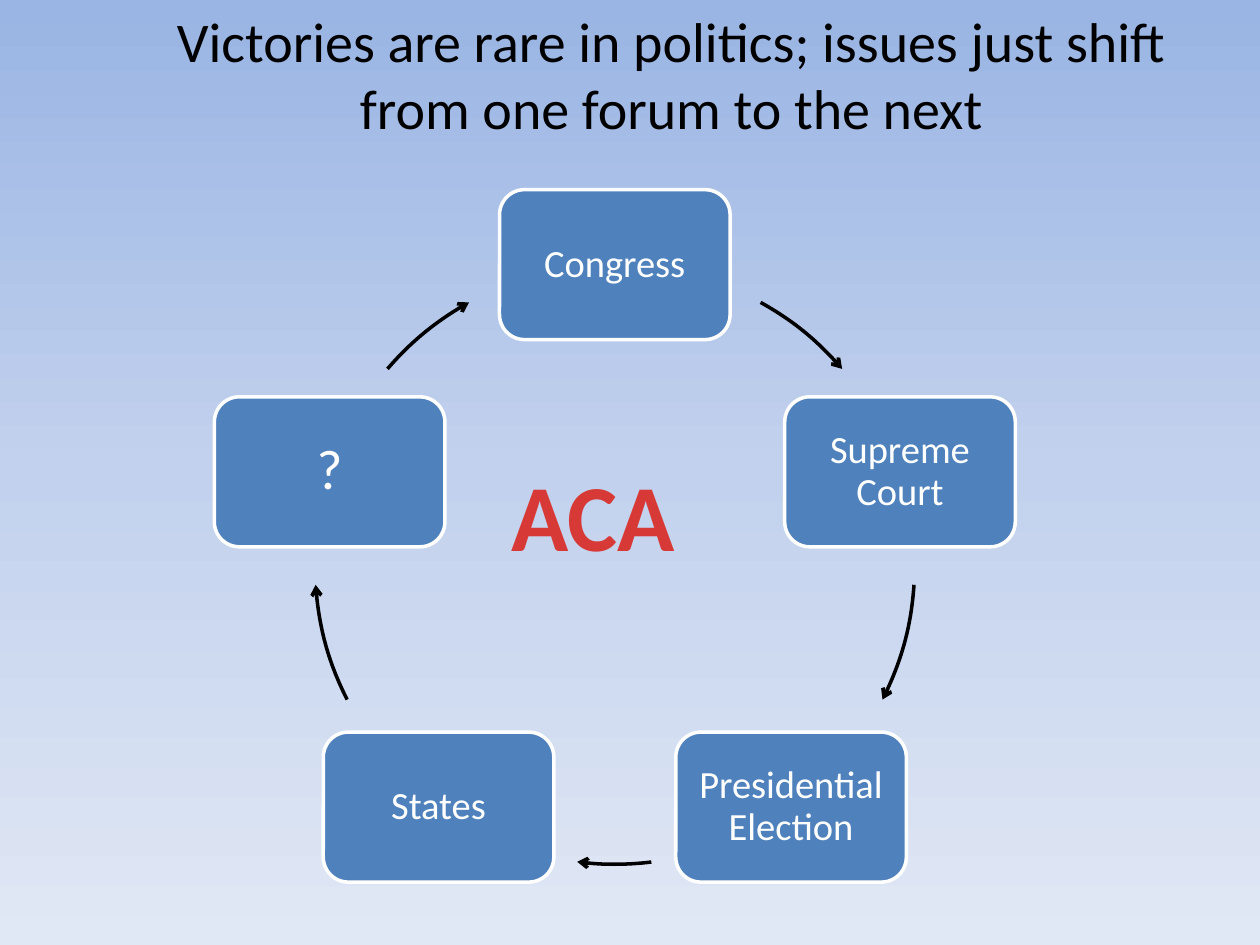
import copy
import math

from pptx import Presentation
from pptx.dml.color import RGBColor
from pptx.enum import shapes, text
from pptx.oxml import ns, xmlchemy
from pptx.util import Inches, Pt

COLORS = {
    "sky_top": "9AB5E4", "sky_middle": "C2D1ED", "sky_bottom": "E1E8F5",
    "box": "4F81BD", "white": "FFFFFF", "black": "000000", "red": "D73A36",
}
FORUMS = [("Congress", 22), ("Supreme Court", 22), ("Presidential Election", 22),
          ("States", 22), ("?", 32)]
# Start and end of each arrow in degrees, clockwise from three o'clock
ARROWS = [(299.1, 319.3), (3.9, 26.8), (83, 97.2), (153.2, 176.1), (220.7, 240.9)]
CENTER_X, CENTER_Y, RADIUS = 4.88, 4.48, 2.38
BOX_WIDTH, BOX_HEIGHT = 1.83, 1.19


def color(name):
    return RGBColor.from_string(COLORS[name])


def paint_background(page):
    fill = page.background.fill
    fill.gradient()
    fill.gradient_angle = 270
    first = next(page.element.iter(ns.qn("a:gs")))
    first.addnext(copy.deepcopy(first))
    names = ("sky_top", "sky_middle", "sky_bottom")
    for stop, name, position in zip(fill.gradient_stops, names, (0, 0.5, 1)):
        stop.color.rgb = color(name)
        stop.position = position


def write(shape, words, size, ink, bold=False, inset=None, line_spacing=None,
          space_before=0, anchor=text.MSO_ANCHOR.TOP):
    frame = shape.text_frame
    frame.word_wrap = True
    frame.vertical_anchor = anchor
    if inset is not None:
        frame.margin_left = frame.margin_right = Inches(inset)
        frame.margin_top = frame.margin_bottom = Inches(inset)
    para = frame.paragraphs[0]
    para.alignment = text.PP_ALIGN.CENTER
    para.line_spacing = line_spacing
    para.space_before = Pt(space_before)
    span = para.add_run()
    span.text = words
    span.font.name = "Calibri"
    span.font.size = Pt(size)
    span.font.bold = bold
    span.font.color.rgb = color(ink)


def add_label(page, left, top, width, height, words, size, ink, **style):
    box = page.shapes.add_textbox(
        Inches(left), Inches(top), Inches(width), Inches(height))
    write(box, words, size, ink, **style)


def add_outlined(page, kind, left, top, width, height, line, fill=None):
    shape = page.shapes.add_shape(
        kind, Inches(left), Inches(top), Inches(width), Inches(height))
    shape.shadow.inherit = False
    if fill:
        shape.fill.solid()
        shape.fill.fore_color.rgb = color(fill)
    else:
        shape.fill.background()
    shape.line.color.rgb = color(line)
    shape.line.width = Pt(2)
    return shape


def add_forum(page, index, words, size):
    """Place a box on the circle, counted clockwise from the top."""
    angle = math.radians(360 / len(FORUMS) * index - 90)
    left = CENTER_X + RADIUS * math.cos(angle) - BOX_WIDTH / 2
    top = CENTER_Y + RADIUS * math.sin(angle) - BOX_HEIGHT / 2
    box = add_outlined(page, shapes.MSO_SHAPE.ROUNDED_RECTANGLE, left, top,
                       BOX_WIDTH, BOX_HEIGHT, "white", "box")
    write(box, words, size, "white", inset=0.09, line_spacing=0.9,
          anchor=text.MSO_ANCHOR.MIDDLE)


def add_arc_arrow(page, start, end):
    arc = add_outlined(page, shapes.MSO_SHAPE.ARC, CENTER_X - RADIUS,
                       CENTER_Y - RADIUS, 2 * RADIUS, 2 * RADIUS, "black")
    # Angles are stored in 60000ths of a degree, adjustments in 100000ths
    arc.adjustments[0] = start * 0.6
    arc.adjustments[1] = end * 0.6
    head = xmlchemy.OxmlElement("a:tailEnd")
    head.set("type", "arrow")
    next(arc.element.iter(ns.qn("a:ln"))).append(head)


def main():
    deck = Presentation()
    deck.slide_width, deck.slide_height = Inches(10), Inches(7.5)
    page = deck.slides.add_slide(deck.slide_layouts[6])
    paint_background(page)
    add_label(page, 0.83, 0, 9, 1.67,
              "Victories are rare in politics; issues just shift from one forum to the next",
              32, "black", space_before=6.4)
    for index, (forum, arrow) in enumerate(zip(FORUMS, ARROWS)):
        add_forum(page, index, *forum)
        add_arc_arrow(page, *arrow)
    add_label(page, 3.75, 3.58, 1.92, 1.01, "ACA", 54, "red", bold=True)
    deck.save("out.pptx")


if __name__ == "__main__":
    main()
